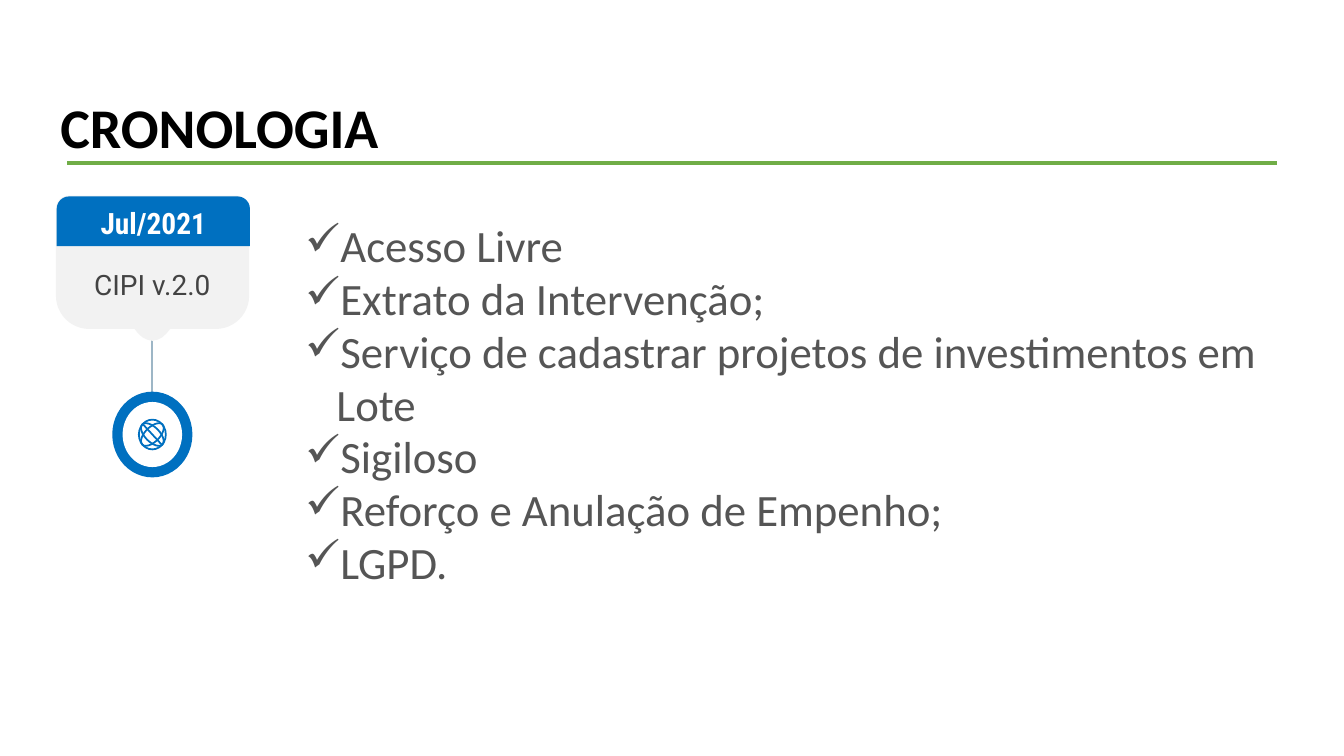
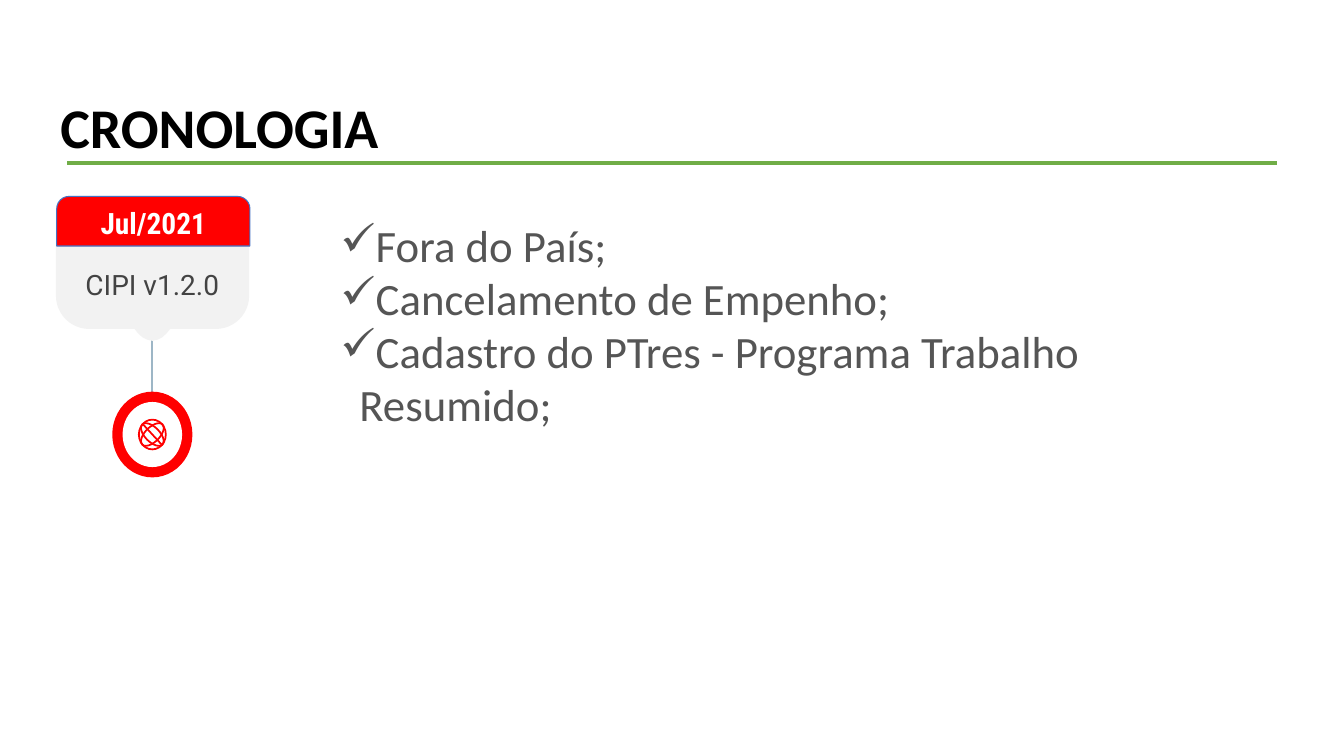
from lxml import etree
from pptx import Presentation
from pptx import util as u
from pptx.dml.color import RGBColor
from pptx.enum import shapes, text
from pptx.oxml.ns import qn

BLUE, RED, GREEN = "0070C0", "FF0000", "70AD47"
WHITE, BLACK, PALE = "FFFFFF", "000000", "F2F2F2"
STEEL, EDGE, GREY, DARK = "9DB6C6", "4472C4", "555555", "434343"
MID = 3.84
HUB = 10.95


def tint(part, code):
    """Give a fill, line or font part a solid colour."""
    if hasattr(part, "solid"):
        part.solid()
        part.fore_color.rgb = RGBColor.from_string(code)
    else:
        part.color.rgb = RGBColor.from_string(code)


def style(para, face, size, code, bold=False):
    """Format the runs of a paragraph."""
    for run in para.runs:
        run.font.name, run.font.size, run.font.bold = face, u.Pt(size), bold
        tint(run.font, code)


def frame(shape, inset, anchor):
    """Set the insets, wrap and anchor of a shape and return its frame."""
    tf = shape.text_frame
    tf.word_wrap = True
    tf.auto_size = text.MSO_AUTO_SIZE.NONE
    tf.vertical_anchor = anchor
    tf.margin_left = tf.margin_right = u.Cm(inset)
    tf.margin_top = tf.margin_bottom = u.Cm(inset)
    return tf


def label(shape, words, face, size, code, bold=False):
    """Write one centred line in a shape."""
    tf = frame(shape, 0.33, text.MSO_ANCHOR.MIDDLE)
    tf.text = words
    tf.paragraphs[0].alignment = text.PP_ALIGN.CENTER
    style(tf.paragraphs[0], face, size, code, bold)


def paint(shape, fill=None, edge=None, width=0.75):
    """Set the fill and outline of a shape without a shadow."""
    shape.shadow.inherit = False
    if fill:
        tint(shape.fill, fill)
    else:
        shape.fill.background()
    if edge:
        tint(shape.line, edge)
        shape.line.width = u.Pt(width)
    else:
        shape.line.fill.background()
    return shape


def preset(slide, kind, box, **look):
    """Add a painted preset shape."""
    shape = slide.shapes.add_shape(kind, *map(u.Cm, box))
    return paint(shape, **look)


def line(slide, ends, code, width):
    """Add a straight line between two points."""
    link = slide.shapes.add_connector(
        shapes.MSO_CONNECTOR.STRAIGHT, *map(u.Cm, ends))
    tint(link.line, code)
    link.line.width = u.Pt(width)
    etree.SubElement(link._element.spPr, qn("a:effectLst"))


def oval(slide, wide, high, turn=0, **look):
    """Add an ellipse centred on the hub."""
    box = MID - wide / 2, HUB - high / 2, wide, high
    preset(slide, shapes.MSO_SHAPE.OVAL, box, **look).rotation = turn


def round_box(slide, box, top, foot, **look):
    """Add a box with its own top and bottom corner radii."""
    shape = preset(slide, shapes.MSO_SHAPE.ROUND_2_SAME_RECTANGLE, box, **look)
    shape.adjustments[0], shape.adjustments[1] = top, foot
    return shape


def tab(slide):
    """Add the rounded tip below the card."""
    half = [(0.48, 8.25), (0.36, 8.4), (0.25, 8.5), (0.13, 8.56)]
    left = [(MID - dx, y) for dx, y in half]
    right = [(MID + dx, y) for dx, y in reversed(half)]
    pts = [(u.Cm(x), u.Cm(y)) for x, y in left + [(MID, 8.59)] + right]
    path = slide.shapes.build_freeform(*pts[0])
    path.add_line_segments(pts[1:])
    paint(path.convert_to_shape(), PALE)


def globe(slide, code):
    """Draw the ringed globe on the hub."""
    oval(slide, 2.02, 2.16, fill=code)
    oval(slide, 1.5, 1.64, fill=WHITE)
    oval(slide, 0.68, 0.75, edge=code, width=1.25)
    for turn in (45, -45):
        oval(slide, 0.37, 0.72, turn, edge=code, width=1.25)
    line(slide, (MID - 0.23, HUB - 0.25, MID + 0.23, HUB + 0.25), code, 1.25)


def card(slide, date, name, code, edge):
    """Draw the dated card with its stem and globe."""
    line(slide, (MID, 8.15, MID, HUB), STEEL, 1.41)
    round_box(slide, (1.41, 4.93, 4.87, 3.36), 0.1, 0.25, fill=PALE)
    tab(slide)
    band = round_box(slide, (1.43, 4.95, 4.87, 1.25), 0.25, 0,
                     fill=code, edge=edge)
    label(band, date, "Roboto Condensed", 21, WHITE, True)
    globe(slide, code)
    note = slide.shapes.add_textbox(*map(u.Cm, (1.73, 6.17, 4.22, 1.98)))
    label(note, name, "Roboto", 20, DARK)


def checks(slide, box, hang, items):
    """Add a list with check marks and a hanging indent."""
    tf = slide.shapes.add_textbox(*map(u.Cm, box)).text_frame
    tf.word_wrap = True
    tf.text = "\n".join(items)
    for para in tf.paragraphs:
        props = para._p.get_or_add_pPr()
        props.set("marL", str(u.Cm(hang)))
        props.set("indent", str(-u.Cm(hang)))
        etree.SubElement(props, qn("a:buChar")).set("char", "✓")
        para.line_spacing = 0.98
        style(para, "Calibri", 32, GREY)


def start(deck, title):
    """Add a slide with the shared title and rule."""
    slide = deck.slides.add_slide(deck.slide_layouts[5])
    line(slide, (1.7, 4.11, 32.18, 4.11), GREEN, 3)
    head = slide.shapes.title
    head.left, head.top, head.width, head.height = map(
        u.Cm, (1.52, 2.67, 21.03, 1.37))
    tf = frame(head, 0, text.MSO_ANCHOR.BOTTOM)
    tf.text = title
    para = tf.paragraphs[0]
    para.alignment, para.line_spacing = text.PP_ALIGN.LEFT, 0.9
    style(para, "Calibri", 40, BLACK, True)
    return slide


def main():
    """Build and save the deck."""
    deck = Presentation()
    deck.slide_width, deck.slide_height = u.Cm(33.87), u.Cm(19.05)
    pages = [
        ("CIPI v.2.0", BLUE, None, (7.44, 5.44, 25.22, 10.69), 0.79, [
            "Acesso Livre",
            "Extrato da Intervenção;",
            "Serviço de cadastrar projetos de investimentos em Lote",
            "Sigiloso",
            "Reforço e Anulação de Empenho;",
            "LGPD."]),
        ("CIPI v1.2.0", RED, EDGE, (8.33, 5.44, 21.34, 5.74), 0.48, [
            "Fora do País;",
            "Cancelamento de Empenho;",
            "Cadastro do PTres - Programa Trabalho Resumido;"]),
    ]
    for name, code, edge, box, hang, items in pages:
        slide = start(deck, "CRONOLOGIA")
        card(slide, "Jul/2021", name, code, edge)
        checks(slide, box, hang, items)
    deck.save("out.pptx")


if __name__ == "__main__":
    main()
